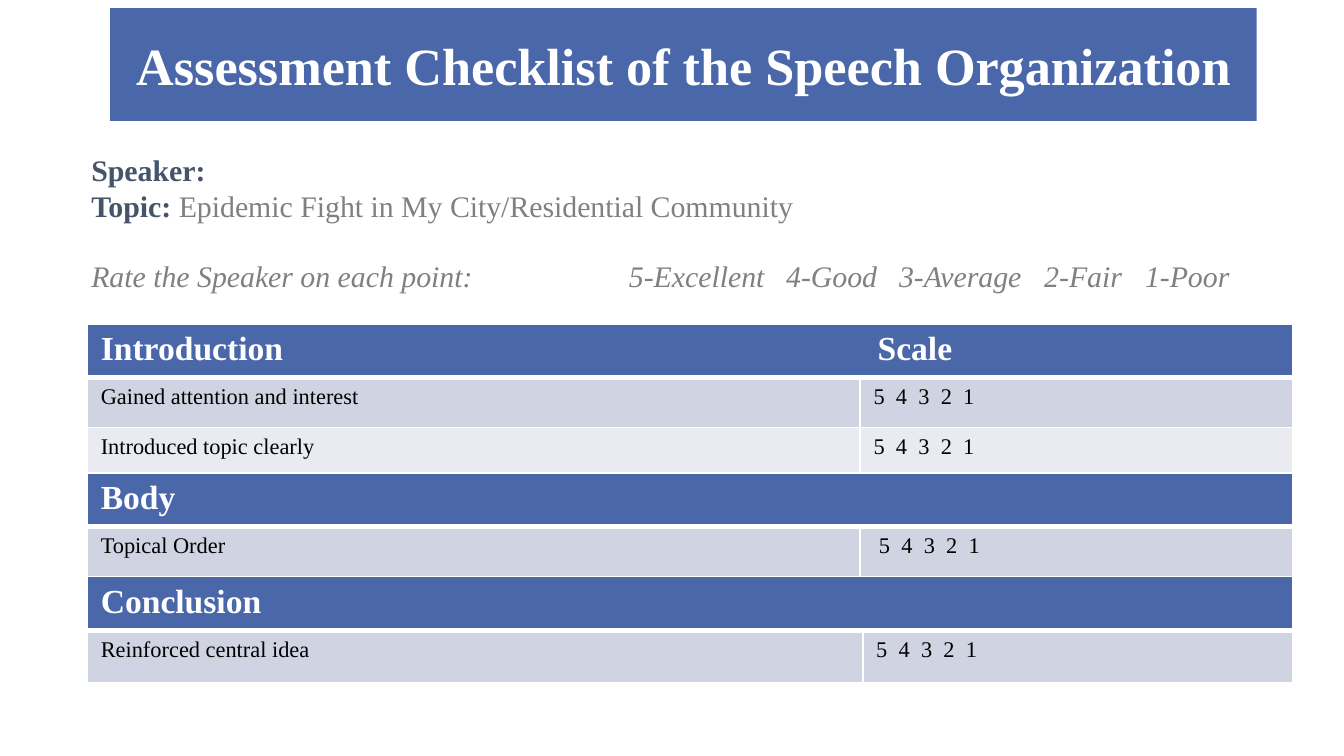
from dataclasses import dataclass

from lxml.etree import SubElement
from pptx import Presentation
from pptx.dml.color import RGBColor
from pptx.enum.text import MSO_ANCHOR, MSO_AUTO_SIZE, PP_ALIGN
from pptx.oxml.ns import qn
from pptx.slide import Slide
from pptx.util import Inches, Pt


@dataclass(frozen=True)
class Theme:
    font: str = "Times New Roman"
    blue: str = "4A67AA"
    band_dark: str = "D0D3E2"
    band_light: str = "E9EBF1"
    white: str = "FFFFFF"
    black: str = "000000"
    slate: str = "44546A"
    gray: str = "808080"
    title_size: int = 28
    intro_size: int = 16
    heading_size: int = 18
    item_size: int = 12
    line_pitch: int = 19


@dataclass(frozen=True)
class Section:
    heading: str
    items: tuple[str, ...]
    top: float
    columns: tuple[float, float]
    rows: tuple[float, ...]
    scale_inset: float = 0.1


THEME = Theme()
SLIDE_WIDTH = 10
SLIDE_HEIGHT = SLIDE_WIDTH * 9 / 16
TABLE_LEFT = 0.65
SCALE = "\t".join("54321")
SCALE_TABS = [step / 6 for step in range(1, 5)]
HEADING_TABS = [5.78]
RATING_TABS = [4, 5.17, 6.01, 7.09, 7.84]
RATINGS = ("5-Excellent", "4-Good", "3-Average", "2-Fair", "1-Poor")
SECTIONS = (
    Section("Introduction\tScale", ("Gained attention and interest", "Introduced topic clearly"),
            2.41, (5.75, 3.22), (0.39, 0.37, 0.35)),
    Section("Body", ("Topical Order",), 3.52, (5.75, 3.22), (0.39, 0.38), 0.14),
    Section("Conclusion", ("Reinforced central idea",), 4.29, (5.77, 3.2), (0.39, 0.39)),
)


def style(font, size: int, color: str, bold: bool = False, italic: bool = False) -> None:
    font.name, font.size = THEME.font, Pt(size)
    font.bold, font.italic = bold, italic
    font.color.rgb = RGBColor.from_string(color)


def add_tabs(paragraph, stops: list[float]) -> None:
    tab_list = SubElement(paragraph._p.get_or_add_pPr(), qn("a:tabLst"))
    for stop in stops:
        SubElement(tab_list, qn("a:tab"), pos=str(Inches(stop)), algn="l")


def add_borders(cell, bottom: int) -> None:
    properties = cell._tc.get_or_add_tcPr()
    for side, width in (("L", 1), ("R", 1), ("T", 1), ("B", bottom)):
        line = SubElement(properties, qn(f"a:ln{side}"), w=str(Pt(width)))
        SubElement(SubElement(line, qn("a:solidFill")), qn("a:srgbClr"), val=THEME.white)


def fill_cell(cell, text: str, fill: str, size: int, color: str,
              bold: bool = False, tabs: list[float] | None = None, bottom: int = 1) -> None:
    add_borders(cell, bottom)
    cell.fill.solid()
    cell.fill.fore_color.rgb = RGBColor.from_string(fill)
    paragraph = cell.text_frame.paragraphs[0]
    paragraph.text = text
    if tabs:
        add_tabs(paragraph, tabs)
    style(paragraph.font, size, color, bold)


def draw_title(slide: Slide) -> None:
    title = slide.shapes.title
    title.left, title.top = Inches(0.82), Inches(0.06)
    title.width, title.height = Inches(8.53), Inches(0.84)
    title.fill.solid()
    title.fill.fore_color.rgb = RGBColor.from_string(THEME.blue)
    frame = title.text_frame
    frame.auto_size = MSO_AUTO_SIZE.NONE
    frame.vertical_anchor = MSO_ANCHOR.MIDDLE
    frame.text = "Assessment Checklist of the Speech Organization"
    heading = frame.paragraphs[0]
    heading.alignment = PP_ALIGN.CENTER
    style(heading.font, THEME.title_size, THEME.white, bold=True)


def draw_introduction(slide: Slide) -> None:
    frame = slide.shapes.add_textbox(Inches(0.65), Inches(1.09), Inches(8.63), Inches(1.14)).text_frame
    frame.word_wrap = True
    frame.vertical_anchor = MSO_ANCHOR.MIDDLE
    frame.margin_left = frame.margin_right = frame.margin_top = frame.margin_bottom = Inches(0.03)
    speaker, topic, rating = frame.paragraphs[0], frame.add_paragraph(), frame.add_paragraph()
    speaker.text = "Speaker:"
    topic.text = "Topic: "
    subject = topic.add_run()
    subject.text = "Epidemic Fight in My City/Residential Community"
    rating.text = "\t".join(("Rate the Speaker on each point:", *RATINGS))
    add_tabs(rating, RATING_TABS)
    for paragraph in (speaker, topic, rating):
        paragraph.line_spacing = Pt(THEME.line_pitch)
    rating.space_before = Pt(THEME.line_pitch)
    style(speaker.font, THEME.intro_size, THEME.slate, bold=True)
    style(topic.runs[0].font, THEME.intro_size, THEME.slate, bold=True)
    style(subject.font, THEME.intro_size, THEME.gray)
    style(rating.font, THEME.intro_size, THEME.gray, italic=True)


def draw_section(slide: Slide, section: Section) -> None:
    table = slide.shapes.add_table(
        len(section.rows), 2, Inches(TABLE_LEFT), Inches(section.top),
        Inches(sum(section.columns)), Inches(sum(section.rows))).table
    for column, width in zip(table.columns, section.columns):
        column.width = Inches(width)
    for row, height in zip(table.rows, section.rows):
        row.height = Inches(height)
    table.cell(0, 0).merge(table.cell(0, 1))
    for column, text in enumerate((section.heading, "")):
        fill_cell(table.cell(0, column), text, THEME.blue, THEME.heading_size, THEME.white,
                  bold=True, tabs=HEADING_TABS, bottom=3)
    for number, item in enumerate(section.items, 1):
        band = THEME.band_dark if number % 2 else THEME.band_light
        label, scale = table.cell(number, 0), table.cell(number, 1)
        fill_cell(label, item, band, THEME.item_size, THEME.black)
        fill_cell(scale, SCALE, band, THEME.item_size, THEME.black, tabs=SCALE_TABS)
        scale.margin_left = Inches(section.scale_inset)


def main() -> None:
    presentation = Presentation()
    presentation.slide_width = Inches(SLIDE_WIDTH)
    presentation.slide_height = Inches(SLIDE_HEIGHT)
    slide = presentation.slides.add_slide(presentation.slide_layouts[5])
    draw_title(slide)
    draw_introduction(slide)
    for section in SECTIONS:
        draw_section(slide, section)
    presentation.save("out.pptx")


if __name__ == "__main__":
    main()
